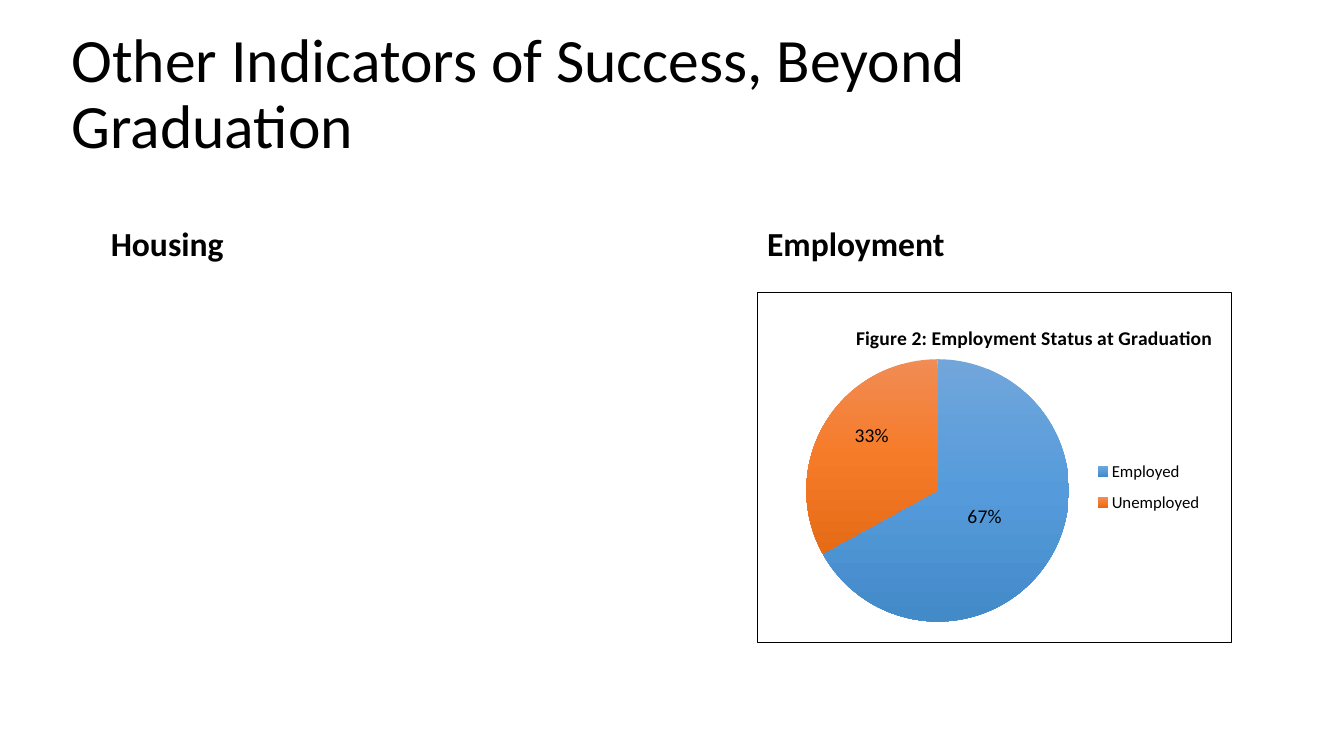
from lxml import etree
from pptx import Presentation
from pptx.chart.data import CategoryChartData as ChartData
from pptx.dml.color import RGBColor as RGB
from pptx.enum.chart import XL_CHART_TYPE as Kind, XL_LABEL_POSITION as Place
from pptx.enum.chart import XL_LEGEND_POSITION as Side
from pptx.enum.text import MSO_ANCHOR as Anchor, MSO_AUTO_SIZE as Fit, PP_ALIGN as Align
from pptx.oxml import parse_xml
from pptx.oxml.ns import nsdecls, qn
from pptx.util import Inches, Pt

FONT = "Calibri"
COLORS = {"text": "000000", "back": "FFFFFF"}
TITLE = "Other Indicators of Success, Beyond Graduation"
HEADS = [("Housing", 1, 1.71), ("Employment", 7.51, 3)]
CHART_TITLE = "Figure 2: Employment Status at Graduation"
# name, percent, gradient from top to bottom, label shift
SLICES = [
    ("Employed", 67, ("71A6DB", "559BDB", "438AC9"), (-0.02, -0.02)),
    ("Unemployed", 33, ("F18C55", "F67B28", "E56B17"), (-0.02, -0.06)),
]


def style(font, size, bold=False):
    font.name, font.size, font.bold = FONT, Pt(size), bold
    font.color.rgb = RGB.from_string(COLORS["text"])


def write(frame, text, size, bold=False, spacing=1.0, anchor=Anchor.TOP, fit=Fit.NONE):
    frame.word_wrap, frame.auto_size, frame.vertical_anchor = True, fit, anchor
    para = frame.paragraphs[0]
    para.alignment, para.line_spacing = Align.LEFT, spacing
    run = para.add_run()
    run.text = text
    style(run.font, size, bold)


def arrange(part, index, x, y, w=None, h=None, edge=True, inner=False):
    """Give a chart part a manual layout, as fractions of the chart."""
    for old in part.findall(qn("c:layout")):
        part.remove(old)
    layout = parse_xml(f'<c:layout {nsdecls("c")}><c:manualLayout/></c:layout>')
    tags = [("layoutTarget", "inner")] if inner else []
    tags += [("xMode", "edge"), ("yMode", "edge")] if edge else []
    tags += [("x", x), ("y", y), ("w", w), ("h", h)]
    for tag, val in tags:
        if val is not None:
            etree.SubElement(layout[0], qn(f"c:{tag}")).set("val", str(val))
    part.insert(index, layout)


def shade(point, hues):
    point.format.fill.gradient()
    point.format.fill.gradient_angle = 270
    stops = "".join(
        f'<a:gs pos="{i * 50000}"><a:srgbClr val="{hue}"/></a:gs>' for i, hue in enumerate(hues)
    )
    fresh = parse_xml(f'<a:gsLst {nsdecls("a")}>{stops}</a:gsLst>')
    old = point.format.fill.gradient_stops[0]
    return old, fresh


def frame_chart(chart):
    back, line = COLORS["back"], COLORS["text"]
    box = parse_xml(
        f'<c:spPr {nsdecls("c", "a")}><a:solidFill><a:srgbClr val="{back}"/></a:solidFill>'
        f'<a:ln w="{Pt(0.75)}"><a:solidFill><a:srgbClr val="{line}"/></a:solidFill></a:ln></c:spPr>'
    )
    chart.element.find(qn("c:chart")).addnext(box)


def add_pie(slide):
    data = ChartData()
    data.categories = [name for name, *_ in SLICES]
    data.add_series("Series 1", [val for _, val, *_ in SLICES])
    spot = [Inches(n) for n in (7.51, 2.9, 4.71, 3.48)]
    chart = slide.shapes.add_chart(Kind.PIE, *spot, data).chart
    style(chart.font, 10)
    frame_chart(chart)

    chart.has_title = True
    head = chart.chart_title.text_frame.paragraphs[0].add_run()
    head.text = CHART_TITLE
    style(head.font, 14, bold=True)
    chart.has_legend = True
    chart.legend.position = Side.RIGHT
    chart.legend.include_in_layout = False
    style(chart.legend.font, 12)

    plot = chart.plots[0]
    plot.vary_by_categories = True
    plot.has_data_labels = True
    plot.data_labels.show_percentage = True
    plot.data_labels.show_value = False
    style(plot.data_labels.font, 14)
    for i, (_, _, hues, _) in enumerate(SLICES):
        point = plot.series[0].points[i]
        _, stops = shade(point, hues)
        style(point.data_label.font, 14)
        point.data_label.position = Place.CENTER
        old = chart.element.xpath(".//c:dPt//a:gsLst")[i]
        old.getparent().replace(old, stops)

    root = chart.element
    for label, (*_, shift) in zip(root.xpath(".//c:dLbl"), SLICES):
        arrange(label, 1, *shift, edge=False)
        label.find(qn("c:showVal")).set("val", "0")
        label.find(qn("c:showPercent")).set("val", "1")
    arrange(root.xpath("c:chart/c:title")[0], 1, 0.2, 0.08)
    arrange(root.xpath(".//c:legend")[0], 1, 0.7, 0.45, 0.25, 0.21)
    arrange(root.xpath(".//c:plotArea")[0], 0, 0.1, 0.19, 0.56, 0.75, inner=True)


def main():
    deck = Presentation()
    deck.slide_width, deck.slide_height = Inches(13.33), Inches(7.5)
    slide = deck.slides.add_slide(deck.slide_layouts[5])
    title = slide.shapes.title
    title.left, title.top = Inches(0.61), Inches(0.55)
    title.width, title.height = Inches(12.11), Inches(0.8)
    title.text_frame.margin_right = Inches(0.5)
    write(title.text_frame, TITLE, 44, spacing=0.9, anchor=Anchor.MIDDLE)
    for text, left, width in HEADS:
        box = slide.shapes.add_textbox(Inches(left), Inches(2.16), Inches(width), Inches(0.5))
        write(box.text_frame, text, 24, bold=True, fit=Fit.SHAPE_TO_FIT_TEXT)
    add_pie(slide)
    deck.save("out.pptx")


if __name__ == "__main__":
    main()
